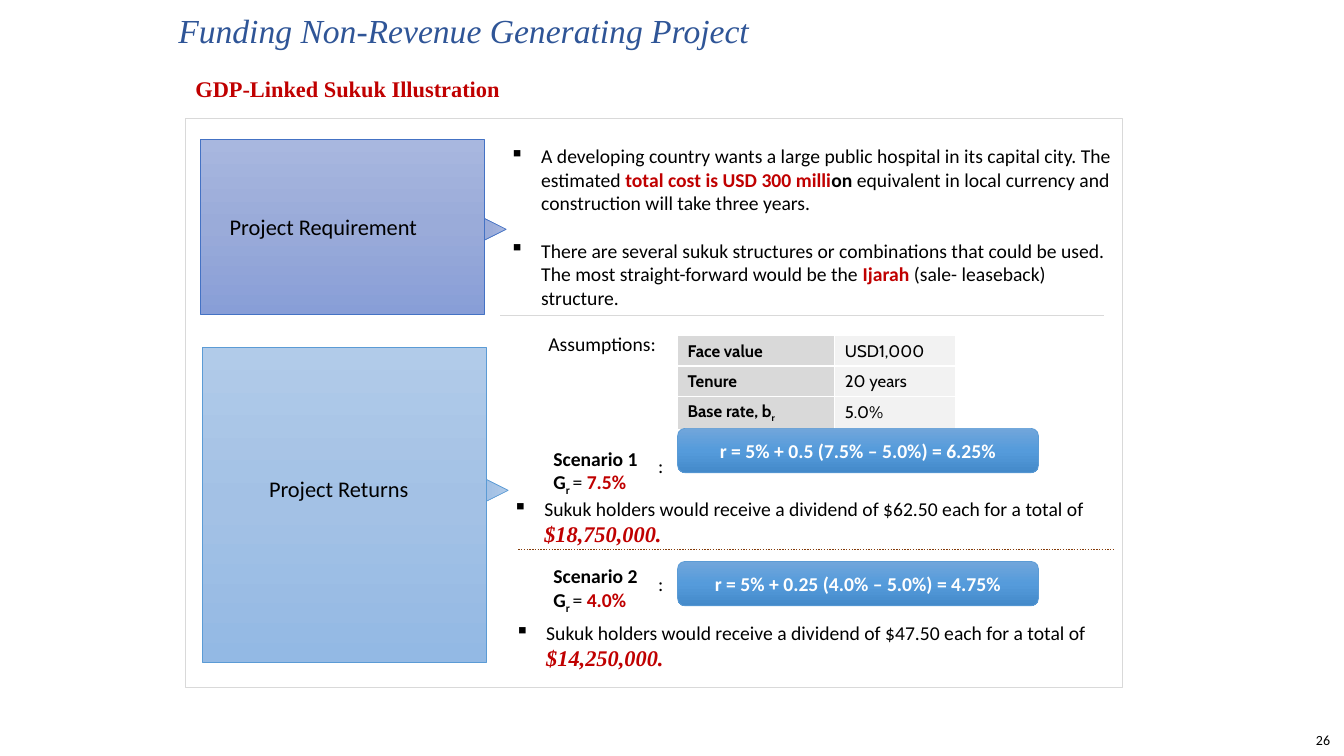
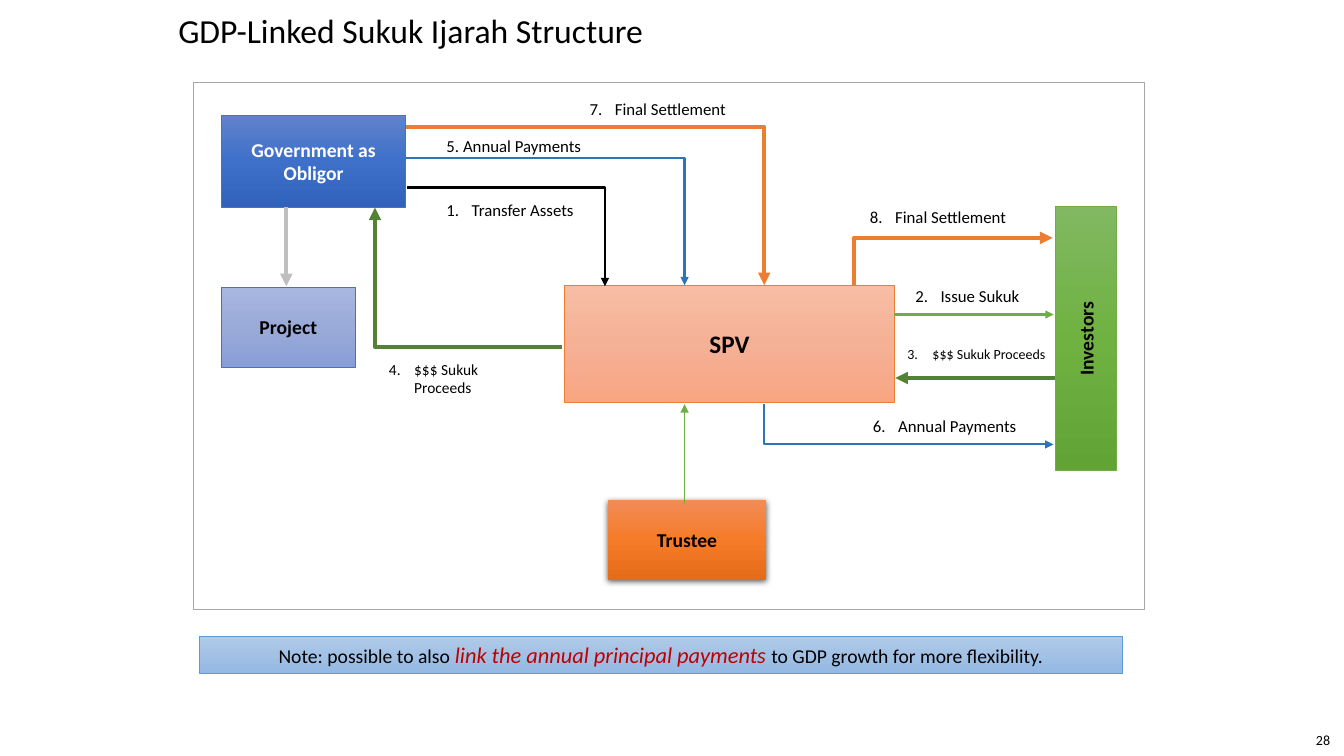
from dataclasses import dataclass

from lxml import etree
from pptx import Presentation
from pptx.dml.color import RGBColor
from pptx.enum.dml import MSO_LINE
from pptx.enum.shapes import MSO_CONNECTOR, MSO_SHAPE
from pptx.enum.text import MSO_ANCHOR, PP_ALIGN
from pptx.oxml.ns import qn
from pptx.util import Pt

PX = 9144
LEFT, CENTER, RIGHT = PP_ALIGN.LEFT, PP_ALIGN.CENTER, PP_ALIGN.RIGHT
TOP, MIDDLE = MSO_ANCHOR.TOP, MSO_ANCHOR.MIDDLE
RECT, ROUND = MSO_SHAPE.RECTANGLE, MSO_SHAPE.ROUNDED_RECTANGLE
TRIANGLE = MSO_SHAPE.ISOSCELES_TRIANGLE
STRAIGHT, ELBOW = MSO_CONNECTOR.STRAIGHT, MSO_CONNECTOR.ELBOW
DOTTED = MSO_LINE.ROUND_DOT


@dataclass(frozen=True)
class Theme:
    sans: str = "Calibri"
    serif: str = "Times New Roman"
    table: str = "Cabin"
    black: str = "000000"
    white: str = "FFFFFF"
    red: str = "C00000"
    title_blue: str = "2F5597"
    blue: str = "2E75B6"
    green: str = "70AD47"
    dark_green: str = "548235"
    orange: str = "ED7D31"
    brown: str = "843C0B"
    silver: str = "BFBFBF"
    frame: str = "A6A6A6"
    rule: str = "D9D9D9"
    cell: str = "F2F2F2"
    periwinkle: tuple = ("A8B7DF", "9AABD9", "889ED7", "4472C4")
    sky: tuple = ("B1CBE9", "A3C1E5", "93B9E4", "5B9BD5")
    azure: tuple = ("71A6DB", "559BDB", "448ACA", "5B9BD5")
    royal: tuple = ("6183CB", "3E70CA", "3062BB", "4472C4")
    salmon: tuple = ("F7BDA5", "F5B196", "F8A582", "ED7D31")
    leaf: tuple = ("81B861", "6FB242", "62A336", "70AD47")
    ember: tuple = ("F18C57", "F67B28", "E56C19", None)
    title: int = 24
    big: int = 18
    head: int = 16
    body: int = 14
    label: int = 12
    small: int = 11
    tiny: int = 10


T = Theme()
RED_BOLD = dict(color=T.red, bold=True)
AMOUNT = dict(size=T.head, color=T.red, font=T.serif, bold=True, italic=True)


@dataclass(frozen=True)
class Box:
    x: int
    y: int
    w: int
    h: int

    def at(self, dx, dy, w, h):
        return Box(self.x + dx, self.y + dy, w, h)

    def emu(self):
        return [v * PX for v in (self.x, self.y, self.w, self.h)]


def rgb(color):
    return RGBColor.from_string(color)


def add(parent, tag, **attrs):
    return etree.SubElement(parent, qn(tag), {k: str(v) for k, v in attrs.items()})


def add_run(p, text, size=T.body, color=T.black, font=T.sans, bold=False, italic=False, base=0):
    r = p.add_run()
    r.text = text
    f = r.font
    f.size, f.name, f.bold, f.italic = Pt(size), font, bold, italic
    f.color.rgb = rgb(color)
    if base:
        r._r.get_or_add_rPr().set("baseline", str(base))


def write(tf, paras, align=LEFT, anchor=TOP, indent=0, bullet=None, start=None, gap=0, **fmt):
    tf.word_wrap = True
    tf.vertical_anchor = anchor
    for i, para in enumerate(paras):
        p = tf.paragraphs[0] if i == 0 else tf.add_paragraph()
        p.alignment = align
        if i and gap:
            p.space_before = Pt(gap)
        if indent:
            pPr = p._p.get_or_add_pPr()
            pPr.set("marL", str(indent * PX))
            pPr.set("indent", str(-indent * PX))
            if bullet:
                add(pPr, "a:buChar", char=bullet)
            else:
                add(pPr, "a:buAutoNum", type="arabicPeriod", startAt=start)
        for text, own in [(para, {})] if isinstance(para, str) else para:
            add_run(p, text, **{**fmt, **own})


def add_text(s, box, *paras, **fmt):
    write(s.shapes.add_textbox(*box.emu()).text_frame, paras, **fmt)


def add_block(s, box, palette, *paras, kind=RECT, **fmt):
    sp = s.shapes.add_shape(kind, *box.emu())
    sp.shadow.inherit = False
    sp.fill.gradient()
    sp.fill.gradient_angle = 270
    stops = sp._element.spPr.find(".//" + qn("a:gsLst"))
    stops.clear()
    *colors, edge = palette
    for i, color in enumerate(colors):
        add(add(stops, "a:gs", pos=i * 50000), "a:srgbClr", val=color)
    if edge:
        sp.line.color.rgb = rgb(edge)
        sp.line.width = Pt(0.5)
    else:
        sp.line.fill.background()
    if paras:
        write(sp.text_frame, paras, **{"align": CENTER, "anchor": MIDDLE, **fmt})
    return sp


def add_frame(s, box, color, width):
    sp = s.shapes.add_shape(RECT, *box.emu())
    sp.shadow.inherit = False
    sp.fill.background()
    sp.line.color.rgb = rgb(color)
    sp.line.width = Pt(width)


def add_line(s, box, start, end, color, width, arrow=None, dash=None):
    (x1, y1), (x2, y2) = start, end
    bent = x1 != x2 and y1 != y2
    c = s.shapes.add_connector(ELBOW if bent else STRAIGHT, (box.x + x1) * PX, (box.y + y1) * PX,
                               (box.x + x2) * PX, (box.y + y2) * PX)
    c.line.color.rgb = rgb(color)
    c.line.width = Pt(width)
    if dash:
        c.line.dash_style = dash
    spPr = c._element.spPr
    if bent:
        spPr.find(qn("a:prstGeom")).set("prst", "bentConnector2")
    if arrow:
        add(spPr.find(qn("a:ln")), arrow, type="triangle")
    add(spPr, "a:effectLst")


def new_slide(prs, title, number, **fmt):
    s = prs.slides.add_slide(prs.slide_layouts[6])
    add_text(s, Box(167, 5, 1067, 50), title, size=T.title, **fmt)
    add_text(s, Box(1271, 714, 58, 40), number, size=T.tiny, align=RIGHT, anchor=MIDDLE)
    return s


def add_callout(s, box, palette, label, label_box, align):
    dx, dy, w = label_box
    sp = add_block(s, box.at(box.w - 15, dy + 2, 37, 37), palette, kind=TRIANGLE)
    sp.rotation = 90
    add_block(s, box, palette)
    add_text(s, box.at(dx, dy, w, 37), label, size=T.head, align=align)


def add_requirement(s, box):
    add_text(s, box,
             [("A developing country wants a large public hospital in its capital city. The estimated ", {}),
              ("total cost is USD 300 milli", RED_BOLD), ("on", dict(bold=True)),
              (" equivalent in local currency and construction will take three years.", {})],
             [("There are several sukuk structures or combinations that could be used. "
               "The most straight-forward would be the ", {}),
              ("Ijarah", RED_BOLD), (" (sale- leaseback) structure.", {})],
             indent=31, bullet="▪", gap=17)
    add_line(s, box, (0, box.h), (599, box.h), T.rule, 0.75)


def add_assumptions(s, box):
    add_text(s, box.at(0, 0, 229, 34), "Assumptions:")
    rows = [([("Face value", {})], "USD1,000"), ([("Tenure", {})], "20 years"),
            ([("Base rate, b", {}), ("r", dict(font=T.sans, base=-25000))], "5.0%")]
    tbl = s.shapes.add_table(len(rows), 2, *box.at(138, 9, 276, 90).emu()).table
    tbl.first_row = tbl.horz_banding = False
    for col, width in zip(tbl.columns, (156, 120)):
        col.width = width * PX
    for i, row in enumerate(rows):
        tbl.rows[i].height = 30 * PX
        for j, (para, fill) in enumerate(zip(row, (T.rule, T.cell))):
            cell = tbl.cell(i, j)
            cell.fill.solid()
            cell.fill.fore_color.rgb = rgb(fill)
            cell.vertical_anchor = MIDDLE
            write(cell.text_frame, [para], anchor=MIDDLE, size=T.label, font=T.table, bold=j == 0)


def add_scenario(s, box, name, growth, formula, formula_dy, dividend, total, bullet_at):
    add_text(s, box.at(0, 0, 127, 57), name,
             [("G", {}), ("r ", dict(base=-25000)), ("= ", dict(bold=False)),
              (growth, dict(color=T.red))], bold=True)
    add_text(s, box.at(104, 7, 58, 34), ":")
    add_block(s, box.at(133, formula_dy, 358, 44), T.azure, formula, kind=ROUND,
              color=T.white, bold=True)
    add_text(s, box.at(*bullet_at, 617, 60),
             [(f"Sukuk holders would receive a dividend of {dividend} each for a total of ", {}),
              (total, AMOUNT)], indent=31, bullet="▪")


def add_illustration(s, box):
    add_text(s, box.at(0, -48, 425, 37), "GDP-Linked Sukuk Illustration",
             size=T.head, font=T.serif, **RED_BOLD)
    add_frame(s, box, T.rule, 0.75)
    add_callout(s, box.at(15, 20, 281, 174), T.periwinkle, "Project Requirement", (19, 69, 242), LEFT)
    add_callout(s, box.at(17, 227, 281, 312), T.sky, "Project Returns", (0, 121, 270), CENTER)
    add_requirement(s, box.at(312, 20, 617, 175))
    add_assumptions(s, box.at(350, 206, 414, 99))
    add_scenario(s, box.at(355, 320, 491, 110), "Scenario 1", "7.5%",
                 "r = 5% + 0.5 (7.5% – 5.0%) = 6.25%", -13, "$62.50", "$18,750,000.", (-40, 50))
    add_line(s, box, (330, 427), (921, 427), T.brown, 1, dash=DOTTED)
    add_scenario(s, box.at(355, 437, 491, 110), "Scenario 2", "4.0%",
                 "r = 5% + 0.25 (4.0% – 5.0%) = 4.75%", 2, "$47.50", "$14,250,000.", (-38, 56))


def add_structure(s, box):
    add_frame(s, box, T.frame, 1)
    parties = [
        ("Investors", (855, 123, 60, 262), T.leaf, {}),
        ("SPV", (368, 201, 327, 116), T.salmon, dict(size=T.big)),
        ("Government as Obligor", (28, 32, 182, 92), T.royal, dict(color=T.white)),
        ("Project", (28, 203, 132, 79), T.periwinkle, {}),
        ("Trustee", (411, 414, 157, 79), T.ember, {}),
    ]
    shapes = {name: add_block(s, box.at(*place), palette, name, bold=True, **fmt)
              for name, place, palette, fmt in parties}
    shapes["Investors"].text_frame._txBody.bodyPr.set("vert", "vert270")
    effects = shapes["Trustee"]._element.spPr.find(qn("a:effectLst"))
    shadow = add(effects, "a:outerShdw", blurRad=Pt(4.5), dist=Pt(1.5), dir=5400000, rotWithShape=0)
    add(add(shadow, "a:srgbClr", val=T.black), "a:alpha", val=63000)

    head, tail = "a:headEnd", "a:tailEnd"
    flows = [
        ((211, 44), (566, 201), T.orange, 3, tail),
        ((211, 75), (487, 201), T.blue, 1.5, tail),
        ((212, 104), (408, 202), T.black, 1.5, tail),
        ((92, 123), (92, 202), T.silver, 3, tail),
        ((365, 262), (180, 124), T.dark_green, 3, tail),
        ((852, 154), (655, 202), T.orange, 3, head),
        ((695, 230), (853, 230), T.green, 1.5, tail),
        ((854, 293), (696, 293), T.dark_green, 3, tail),
        ((853, 359), (566, 319), T.blue, 1.5, head),
        ((487, 418), (487, 319), T.green, 0.5, tail),
    ]
    for flow in flows:
        add_line(s, box, *flow)

    add_text(s, box.at(241, 48, 248, 30), "5. Annual Payments", size=T.label)
    steps = [
        (1, "Transfer Assets", (241, 111, 196, 30), T.label),
        (2, "Issue Sukuk", (706, 197, 142, 30), T.label),
        (3, "$$$ Sukuk Proceeds", (698, 256, 165, 28), T.tiny),
        (4, "$$$ Sukuk Proceeds", (184, 270, 160, 47), T.small),
        (6, "Annual Payments", (664, 326, 202, 30), T.label),
        (7, "Final Settlement", (383, 11, 196, 30), T.label),
        (8, "Final Settlement", (661, 118, 196, 30), T.label),
    ]
    for start, text, place, size in steps:
        add_text(s, box.at(*place), text, indent=25, start=start, size=size)


def add_note(s, box):
    add_block(s, box, T.sky,
              [("Note: possible to also ", {}),
               ("link the annual principal payments ", dict(size=T.head, color=T.red, italic=True)),
               ("to GDP growth for more flexibility.", {})])


def main():
    prs = Presentation()
    prs.slide_width, prs.slide_height = 1333 * PX, 750 * PX
    s = new_slide(prs, "Funding Non-Revenue Generating Project", "26",
                  font=T.serif, color=T.title_blue, italic=True)
    add_illustration(s, Box(184, 118, 929, 564))
    s = new_slide(prs, "GDP-Linked Sukuk Ijarah Structure", "28")
    add_structure(s, Box(192, 82, 943, 523))
    add_note(s, Box(198, 631, 915, 37))
    prs.save("out.pptx")


if __name__ == "__main__":
    main()
